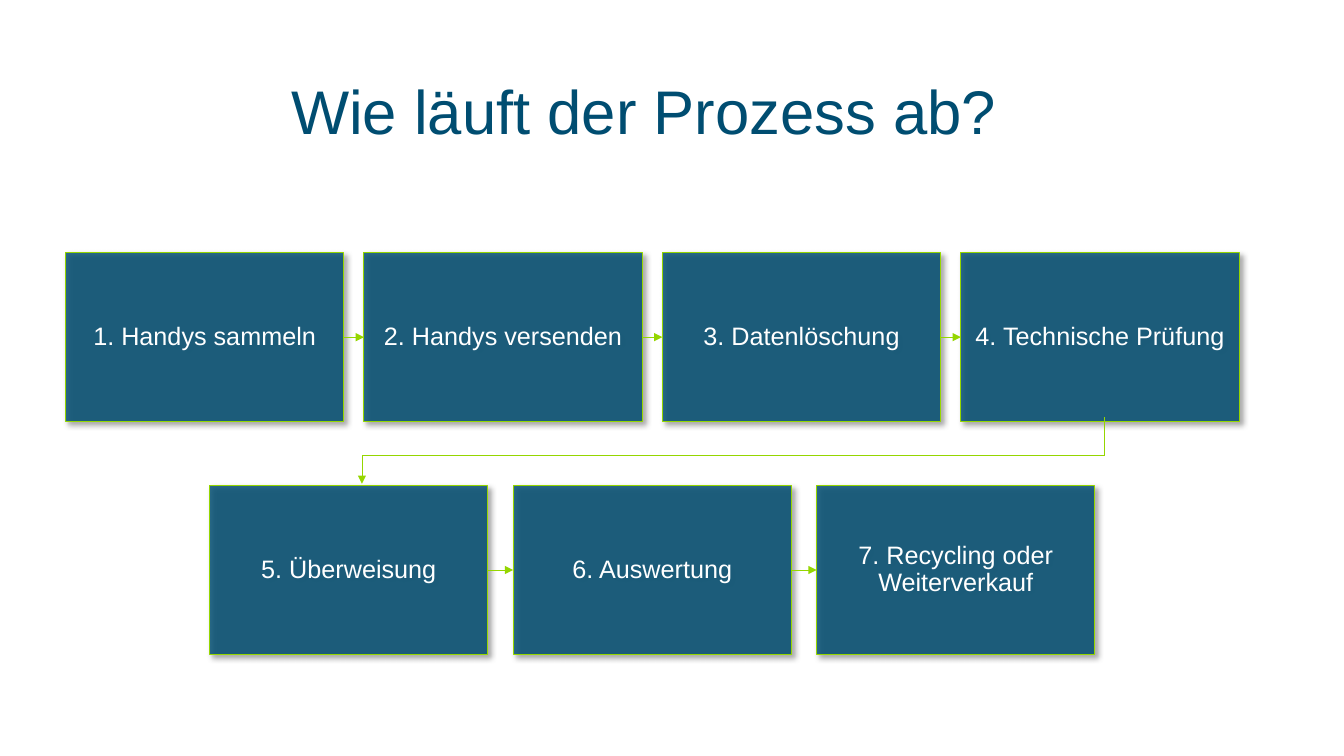
from dataclasses import dataclass
from itertools import pairwise

from pptx import Presentation
from pptx.dml.color import RGBColor
from pptx.enum.shapes import MSO_CONNECTOR, MSO_SHAPE
from pptx.enum.text import MSO_ANCHOR, PP_ALIGN
from pptx.oxml import parse_xml
from pptx.oxml.ns import nsdecls, qn
from pptx.util import Inches, Pt


@dataclass(frozen=True)
class Theme:
    font: str = "Arial"
    navy: RGBColor = RGBColor(0x00, 0x4D, 0x71)
    green: RGBColor = RGBColor(0x95, 0xD6, 0x00)
    white: RGBColor = RGBColor(0xFF, 0xFF, 0xFF)
    title_size: int = 44
    step_size: int = 18
    border: float = 0.75
    arrow: float = 0.5


class ProcessSlide:
    def __init__(self, slide, theme):
        self.shapes = slide.shapes
        self.theme = theme

    def add_wording(self, frame, wording, size, color, align):
        frame.word_wrap = True
        frame.vertical_anchor = MSO_ANCHOR.MIDDLE
        paragraph = frame.paragraphs[0]
        paragraph.alignment = align
        paragraph.line_spacing = 0.9
        run = paragraph.add_run()
        run.text = wording
        run.font.name = self.theme.font
        run.font.size = Pt(size)
        run.font.color.rgb = color

    def title(self, wording, left, top, width, height):
        heading = self.shapes.add_textbox(
            Inches(left), Inches(top), Inches(width), Inches(height))
        self.add_wording(heading.text_frame, wording, self.theme.title_size,
                         self.theme.navy, PP_ALIGN.LEFT)

    def step(self, wording, left, top, width, height):
        step = self.shapes.add_shape(
            MSO_SHAPE.RECTANGLE,
            Inches(left), Inches(top), Inches(width), Inches(height))
        step.fill.solid()
        step.fill.fore_color.rgb = self.theme.navy
        step.line.color.rgb = self.theme.green
        step.line.width = Pt(self.theme.border)
        step.shadow.inherit = False
        properties = step.element.spPr
        fill_color = properties.find(qn("a:solidFill")).find(qn("a:srgbClr"))
        fill_color.append(parse_xml(f'<a:alpha {nsdecls("a")} val="83000"/>'))
        properties.find(qn("a:effectLst")).append(parse_xml(
            f'<a:outerShdw {nsdecls("a")} blurRad="{Pt(4)}" dist="{Pt(3)}" '
            'dir="2700000" algn="tl" rotWithShape="0"><a:srgbClr val="000000">'
            '<a:alpha val="40000"/></a:srgbClr></a:outerShdw>'))
        frame = step.text_frame
        frame.margin_left = frame.margin_right = Inches(0.07)
        frame.margin_top = frame.margin_bottom = Inches(0.07)
        self.add_wording(frame, wording, self.theme.step_size,
                         self.theme.white, PP_ALIGN.CENTER)
        return step

    def line(self, start=(0, 0), end=(0, 0), arrow=False):
        connector = self.shapes.add_connector(
            MSO_CONNECTOR.STRAIGHT, *map(Inches, start + end))
        connector.line.color.rgb = self.theme.green
        connector.line.width = Pt(self.theme.arrow)
        properties = connector.element.spPr
        if arrow:
            properties.find(qn("a:ln")).append(
                parse_xml(f'<a:tailEnd {nsdecls("a")} type="triangle"/>'))
        properties.append(parse_xml(f'<a:effectLst {nsdecls("a")}/>'))
        return connector

    def row(self, wordings, left, top, pitch):
        steps = [self.step(wording, left + index * pitch, top, 2.76, 1.67)
                 for index, wording in enumerate(wordings)]
        for previous, following in pairwise(steps):
            link = self.line(arrow=True)
            link.begin_connect(previous, 3)
            link.end_connect(following, 1)


def main():
    deck = Presentation()
    deck.slide_width = Inches(13.33)
    deck.slide_height = Inches(7.5)
    process = ProcessSlide(deck.slides.add_slide(deck.slide_layouts[6]), Theme())

    process.title("Wie läuft der Prozess ab?", 2.79, 0.54, 8.44, 1.2)
    process.row(["1. Handys sammeln", "2. Handys versenden",
                 "3. Datenlöschung", "4. Technische Prüfung"], 0.65, 2.51, 2.96)
    process.row(["5. Überweisung", "6. Auswertung",
                 "7. Recycling oder Weiterverkauf"], 2.08, 4.82, 3.01)

    turns = [(10.95, 4.14), (10.95, 4.52), (3.59, 4.52), (3.59, 4.8)]
    for start, end in pairwise(turns):
        process.line(start, end, arrow=end == turns[-1])

    deck.save("out.pptx")


if __name__ == "__main__":
    main()
